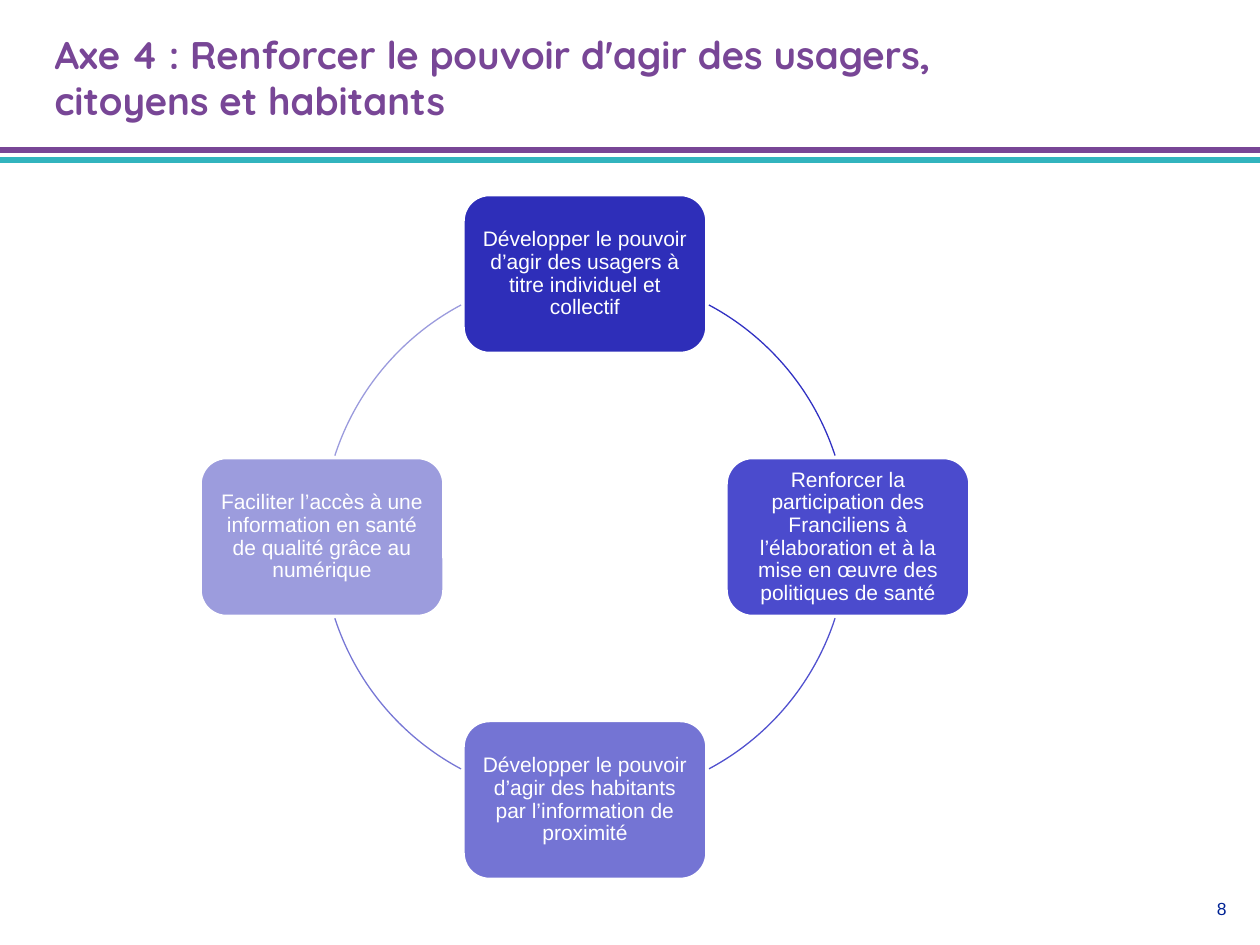
from math import cos, radians, sin

from lxml.etree import SubElement
from pptx import Presentation
from pptx.dml.color import RGBColor
from pptx.enum.shapes import MSO_CONNECTOR, MSO_SHAPE
from pptx.enum.text import MSO_ANCHOR, MSO_AUTO_SIZE, PP_ALIGN
from pptx.oxml.ns import qn
from pptx.util import Pt

EMU_PER_PX = 914400 / 126
WIDTH, HEIGHT = 1260, 945
PURPLE, TEAL, NAVY, WHITE = "784696", "32B4BE", "002395", "FFFFFF"
CENTER_X, CENTER_Y, RADIUS = 585, 537, 263
BOX_WIDTH, BOX_HEIGHT = 244, 159

STEPS = [
    ("Développer le pouvoir d’agir des usagers à titre individuel et collectif",
     "2E2EB9", "3131C3", (298.1, 342)),
    ("Renforcer la participation des Franciliens à l’élaboration et à la mise en œuvre "
     "des politiques de santé", "4B4BCD", "5151CF", (18, 61.9)),
    ("Développer le pouvoir d’agir des habitants par l’information de proximité",
     "7474D4", "7777D5", (118.1, 162)),
    ("Faciliter l’accès à une information en santé de qualité grâce au numérique",
     "9C9CDD", "9B9BDD", (198, 241.9)),
]


def px(length):
    return round(length * EMU_PER_PX)


def color(value):
    return RGBColor.from_string(value)


def write(frame, text, font="Arial", size=12, fill=WHITE, bold=False,
          align=PP_ALIGN.LEFT, anchor=MSO_ANCHOR.TOP, spacing=None, inset=None):
    frame.word_wrap = True
    frame.auto_size = MSO_AUTO_SIZE.NONE
    frame.vertical_anchor = anchor
    if inset is not None:
        frame.margin_left = frame.margin_right = px(inset)
        frame.margin_top = frame.margin_bottom = px(inset)
    paragraph = frame.paragraphs[0]
    paragraph.alignment = align
    paragraph.line_spacing = spacing
    run = paragraph.add_run()
    run.text = text
    run.font.name = font
    run.font.size = Pt(size)
    run.font.bold = bold
    run.font.color.rgb = color(fill)


class SlideBuilder:
    def __init__(self, presentation):
        self.slide = presentation.slides.add_slide(presentation.slide_layouts[5])
        self.shapes = self.slide.shapes

    def title(self, text, left, top, width, height):
        shape = self.shapes.title
        shape.left, shape.top = px(left), px(top)
        shape.width, shape.height = px(width), px(height)
        write(shape.text_frame, text, font="Quicksand", size=22, fill=PURPLE,
              bold=True, anchor=MSO_ANCHOR.MIDDLE)

    def rule(self, top, line):
        connector = self.shapes.add_connector(
            MSO_CONNECTOR.STRAIGHT, 0, px(top), px(WIDTH), px(top))
        connector.line.color.rgb = color(line)
        connector.line.width = Pt(3)
        SubElement(connector._element.spPr, qn("a:effectLst"))

    def label(self, text, left, top, width, height, **style):
        box = self.shapes.add_textbox(px(left), px(top), px(width), px(height))
        write(box.text_frame, text, **style)

    def preset(self, kind, center_x, center_y, width, height, line, weight):
        shape = self.shapes.add_shape(
            kind, px(center_x - width / 2), px(center_y - height / 2), px(width), px(height))
        shape.shadow.inherit = False
        shape.line.color.rgb = color(line)
        shape.line.width = Pt(weight)
        return shape

    def box(self, text, center_x, center_y, fill):
        shape = self.preset(MSO_SHAPE.ROUNDED_RECTANGLE, center_x, center_y,
                            BOX_WIDTH, BOX_HEIGHT, WHITE, 2)
        shape.fill.solid()
        shape.fill.fore_color.rgb = color(fill)
        write(shape.text_frame, text, align=PP_ALIGN.CENTER,
              anchor=MSO_ANCHOR.MIDDLE, spacing=0.9, inset=6)

    def arc(self, angles, line):
        shape = self.preset(MSO_SHAPE.ARC, CENTER_X, CENTER_Y,
                            2 * RADIUS, 2 * RADIUS, line, 0.75)
        shape.fill.background()
        for index, angle in enumerate(angles):
            shape.adjustments[index] = angle * 60000 / 100000


def main():
    presentation = Presentation()
    presentation.slide_width, presentation.slide_height = px(WIDTH), px(HEIGHT)
    builder = SlideBuilder(presentation)
    builder.label("8", 1176, 892, 63, 63, size=10, fill=NAVY, align=PP_ALIGN.RIGHT)
    builder.rule(150, PURPLE)
    builder.rule(160, TEAL)
    builder.title("Axe 4 : Renforcer le pouvoir d'agir des usagers, citoyens et habitants",
                  42, 30, 1045, 95)
    for index, (text, fill, line, angles) in enumerate(STEPS):
        direction = radians(90 * index - 90)
        builder.box(text, CENTER_X + RADIUS * cos(direction),
                    CENTER_Y + RADIUS * sin(direction), fill)
        builder.arc(angles, line)
    presentation.save("out.pptx")


if __name__ == "__main__":
    main()
